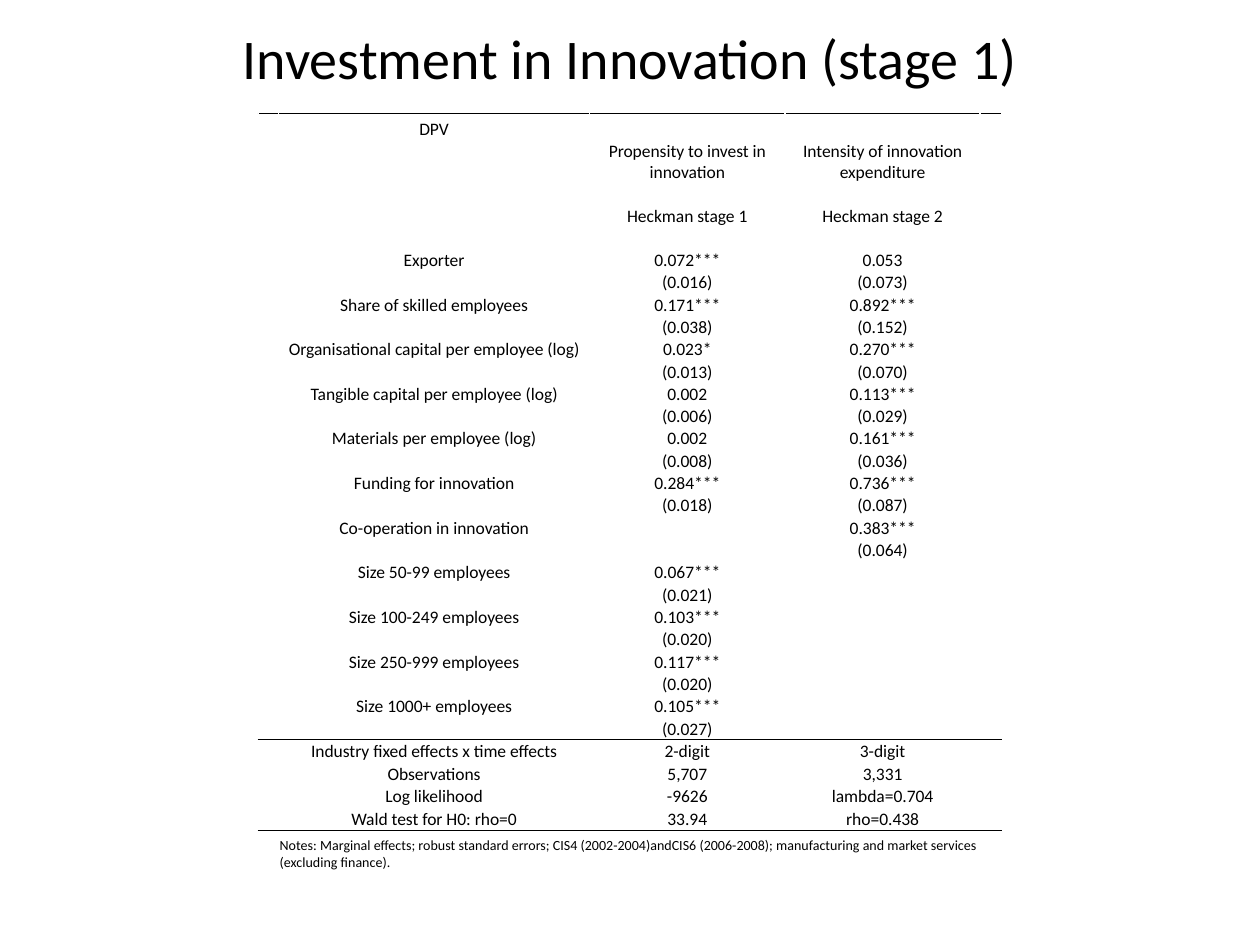
from lxml.etree import SubElement
from pptx import Presentation
from pptx.dml.color import RGBColor
from pptx.enum.text import MSO_ANCHOR as Anchor, PP_ALIGN as Align
from pptx.oxml.ns import qn
from pptx.util import Inches, Pt

COLUMN_WIDTHS = [0.16, 2.47, 1.55, 1.55, 0.17]
ROW_HEIGHTS = [0.21, 0.18, 0.17, 0.18] + [0.17] * 24 + [0.18] * 3 + [0.33]
HEADER = [
    ("DPV", "Propensity to invest in innovation", "Intensity of innovation expenditure"),
    ("", "", ""),
    ("", "", ""),
    ("", "Heckman stage 1", "Heckman stage 2"),
    ("", "", ""),
]
# Variable, then coefficient and standard error for each stage
ESTIMATES = [
    ("Exporter", "0.072***", "(0.016)", "0.053", "(0.073)"),
    ("Share of skilled employees", "0.171***", "(0.038)", "0.892***", "(0.152)"),
    ("Organisational capital per employee (log)", "0.023*", "(0.013)", "0.270***", "(0.070)"),
    ("Tangible capital per employee (log)", "0.002", "(0.006)", "0.113***", "(0.029)"),
    ("Materials per employee (log)", "0.002", "(0.008)", "0.161***", "(0.036)"),
    ("Funding for innovation", "0.284***", "(0.018)", "0.736***", "(0.087)"),
    ("Co-operation in innovation", "", "", "0.383***", "(0.064)"),
    ("Size 50-99 employees", "0.067***", "(0.021)", "", ""),
    ("Size 100-249 employees", "0.103***", "(0.020)", "", ""),
    ("Size 250-999 employees", "0.117***", "(0.020)", "", ""),
    ("Size 1000+ employees", "0.105***", "(0.027)", "", ""),
]
SUMMARY = [
    ("Industry fixed effects x time effects", "2-digit", "3-digit"),
    ("Observations", "5,707", "3,331"),
    ("Log likelihood", "-9626", "lambda=0.704"),
    ("Wald test for H0: rho=0", "33.94", "rho=0.438"),
]
NOTES = ("Notes: Marginal effects; robust standard errors; CIS4 (2002-2004)andCIS6 (2006-2008); "
         "manufacturing and market services (excluding finance).")


def color(hex_string):
    return RGBColor.from_string(hex_string)


def table_rows():
    rows = list(HEADER)
    for name, first, first_error, second, second_error in ESTIMATES:
        rows += [(name, first, second), ("", first_error, second_error)]
    return rows + SUMMARY + [(NOTES, "", "")]


class SlideBuilder:
    font_name = "Calibri"
    ink = "000000"
    paper = "FFFFFF"

    def __init__(self, slide):
        self.slide = slide

    def set_text(self, paragraph, text, size, align=Align.CENTER):
        paragraph.text = text
        paragraph.alignment = align
        font = paragraph.font
        font.name, font.size, font.bold = self.font_name, Pt(size), False
        font.color.rgb = color(self.ink)

    def title(self, text):
        shape = self.slide.shapes.add_textbox(Inches(0.5), 0, Inches(9), Inches(1.25))
        frame = shape.text_frame
        frame.word_wrap = True
        frame.vertical_anchor = Anchor.TOP
        frame.margin_top = Inches(0.19)
        self.set_text(frame.paragraphs[0], text, 32)

    def rule(self, cell, side):
        """Draw a thin border on a cell; side is lnT or lnB."""
        line = SubElement(cell._tc.get_or_add_tcPr(), qn(f"a:{side}"), w=str(Pt(0.5)))
        fill = SubElement(line, qn("a:solidFill"))
        SubElement(fill, qn("a:srgbClr"), val=self.ink)

    def cell(self, cell, text, size=10, align=Align.CENTER, rules=()):
        for side in rules:
            self.rule(cell, side)
        cell.fill.solid()
        cell.fill.fore_color.rgb = color(self.paper)
        cell.vertical_anchor = Anchor.BOTTOM
        cell.margin_left = cell.margin_right = cell.margin_top = Inches(0.01)
        cell.margin_bottom = 0
        paragraph = cell.text_frame.paragraphs[0]
        if text:
            self.set_text(paragraph, text, size, align)
        else:
            # Keeps an empty cell from stretching its row
            SubElement(paragraph._p, qn("a:endParaRPr"), sz="800")

    def table(self, rows, left, top):
        frame = self.slide.shapes.add_table(
            len(rows), len(COLUMN_WIDTHS), Inches(left), Inches(top),
            Inches(sum(COLUMN_WIDTHS)), Inches(sum(ROW_HEIGHTS)))
        table = frame.table
        table.first_row = table.horz_banding = False
        for column, width in zip(table.columns, COLUMN_WIDTHS):
            column.width = Inches(width)
        for row, height in zip(table.rows, ROW_HEIGHTS):
            row.height = Inches(height)

        last = len(rows) - 1
        summary_start = last - len(SUMMARY)
        rules = {0: ["lnT"], summary_start - 1: ["lnB"], summary_start: ["lnT"],
                 last - 1: ["lnB"], last: ["lnT"]}
        for r, values in enumerate(rows):
            size, align = (8, Align.LEFT) if r == last else (10, Align.CENTER)
            for c, text in enumerate(("", *values, "")):
                self.cell(table.cell(r, c), text, size, align, rules.get(r, ()))
        for c in (2, 3):
            table.cell(0, c).merge(table.cell(1, c))
        table.cell(last, 1).merge(table.cell(last, 3))


def main():
    presentation = Presentation()
    presentation.slide_width, presentation.slide_height = Inches(10), Inches(7.5)
    builder = SlideBuilder(presentation.slides.add_slide(presentation.slide_layouts[6]))
    builder.title("Investment in Innovation (stage 1)")
    builder.table(table_rows(), 2.05, 0.9)
    presentation.save("out.pptx")


if __name__ == "__main__":
    main()
